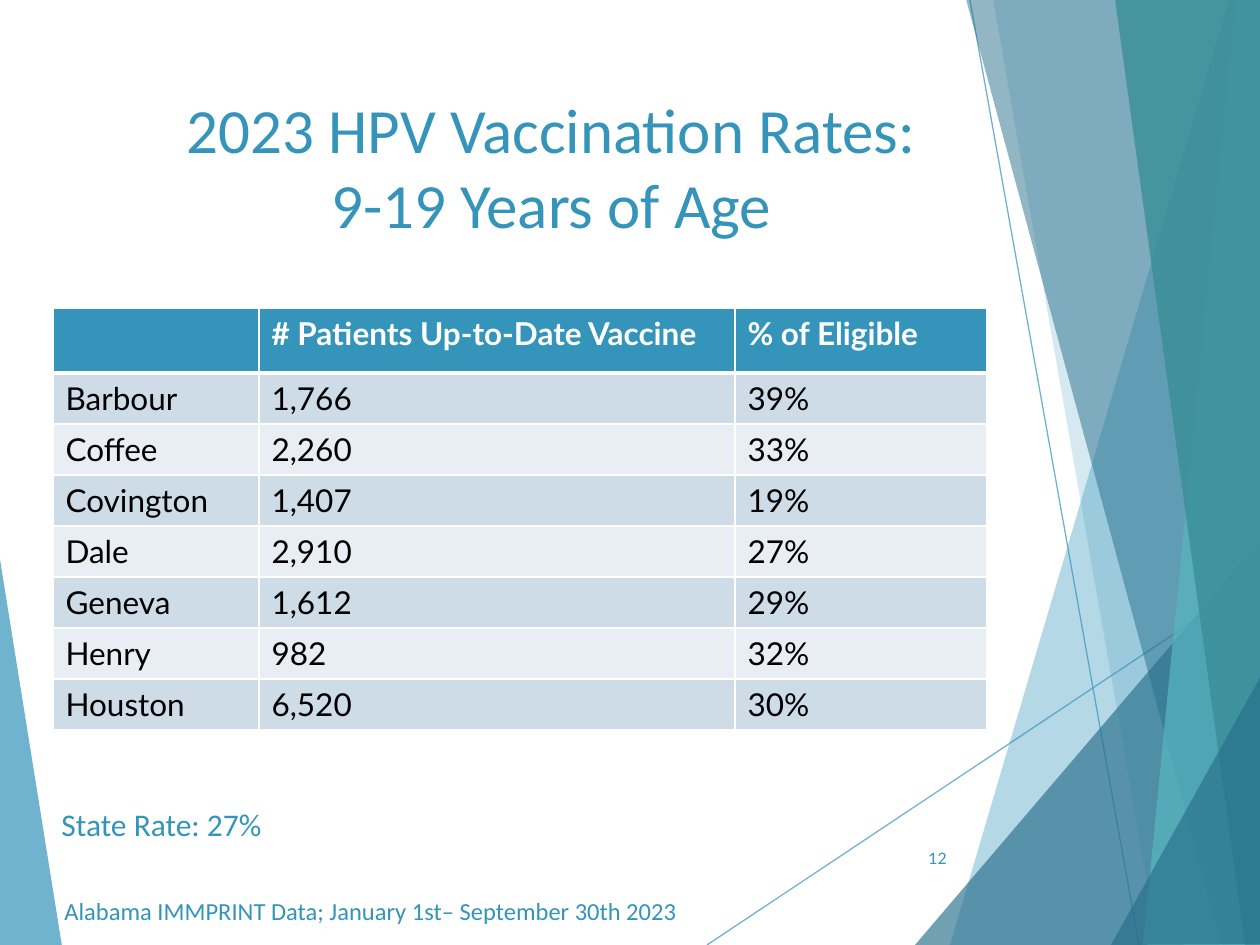
from lxml import etree
from pptx import Presentation
from pptx.dml.color import RGBColor
from pptx.enum.shapes import MSO_CONNECTOR
from pptx.enum.text import MSO_ANCHOR, PP_ALIGN
from pptx.oxml import parse_xml
from pptx.oxml.ns import nsdecls, qn
from pptx.util import Pt

PX = 914400 / 126
STRAIGHT = MSO_CONNECTOR.STRAIGHT
TOP, MIDDLE = MSO_ANCHOR.TOP, MSO_ANCHOR.MIDDLE
LEFT, CENTER, RIGHT = PP_ALIGN.LEFT, PP_ALIGN.CENTER, PP_ALIGN.RIGHT
BLUE, NAVY, AQUA, TEAL = "3494BA", "276F8B", "58B6C0", "3A8F98"
WHITE, BLACK = "FFFFFF", "000000"


def px(n):
    return round(n * PX)


def paint(fmt, color, alpha=100):
    """Set a solid colour on a fill or font, with opacity in percent."""
    if hasattr(fmt, "solid"):
        fmt.solid()
        target = fmt.fore_color
    else:
        target = fmt.color
    target.rgb = RGBColor.from_string(color)
    if alpha < 100:
        clr = target._xFill.find(qn("a:srgbClr"))
        etree.SubElement(clr, qn("a:alpha")).set("val", str(alpha * 1000))


prs = Presentation()
prs.slide_width, prs.slide_height = px(1260), px(945)
slide = prs.slides.add_slide(prs.slide_layouts[6])
shapes = slide.shapes

# Left wedge, thin lines and right-hand facets, back to front
wedge = ([(-1, 553), (62, 946), (-1, 945)], BLUE, 70)
facets = [
    ([(1229, 0), (950, 945), (1262, 946), (1261, 1)], BLUE, 36),
    ([(993, -1), (1158, 945), (1261, 945), (1261, -1)], BLUE, 20),
    ([(915, 945), (1260, 541), (1261, 945)], NAVY, 66),
    ([(966, -1), (1222, 945), (1261, 944), (1261, -1)], NAVY, 50),
    ([(1236, -1), (1143, 945), (1261, 945), (1260, -1)], AQUA, 70),
    ([(1115, -1), (1245, 945), (1262, 945), (1260, -1)], TEAL, 82),
    ([(1111, 945), (1262, 674), (1262, 944)], NAVY, 66),
]
lines = [(707, 945, 1261, 576), (970, 0, 1139, 945)]

for i, (points, color, alpha) in enumerate([wedge] + facets):
    fb = shapes.build_freeform(*points[0], scale=PX)
    fb.add_line_segments(points[1:], close=True)
    sp = fb.convert_to_shape()
    sp.shadow.inherit = False
    sp.line.fill.background()
    paint(sp.fill, color, alpha)
    if i == 0:
        for ends in lines:
            cx = shapes.add_connector(STRAIGHT, *[px(n) for n in ends])
            cx.line.width = Pt(0.75)
            paint(cx.line.fill, BLUE, 70)
            etree.SubElement(cx._element.spPr, qn("a:effectLst"))

# Title, slide number, state rate and data credit
texts = [
    ("2023 HPV Vaccination Rates:\v9-19 Years of Age", (84, 84, 935, 181),
     {"name": "Calibri", "size": Pt(36)}, CENTER, TOP),
    ("12", (888, 833, 71, 50), {"name": "Lato", "size": Pt(9)}, RIGHT, MIDDLE),
    ("State Rate: 27%", (49, 799, 725, 89),
     {"name": "Calibri", "size": Pt(18)}, LEFT, TOP),
    ("Alabama IMMPRINT Data; January 1st– September 30th 2023",
     (52, 890, 835, 43), {"name": "Calibri", "size": Pt(14)}, LEFT, TOP),
]
for text, box, font, align, anchor in texts:
    tf = shapes.add_textbox(*[px(n) for n in box]).text_frame
    tf.word_wrap = True
    tf.vertical_anchor = anchor
    p = tf.paragraphs[0]
    p.text = text
    p.alignment = align
    for r in p.runs:
        for key, value in font.items():
            setattr(r.font, key, value)
        paint(r.font, BLUE)

# County table
rows = [
    ("", "# Patients Up-to-Date Vaccine", "% of Eligible"),
    ("Barbour", "1,766", "39%"),
    ("Coffee", "2,260", "33%"),
    ("Covington", "1,407", "19%"),
    ("Dale", "2,910", "27%"),
    ("Geneva", "1,612", "29%"),
    ("Henry", "982", "32%"),
    ("Houston", "6,520", "30%"),
]
col_widths = [206, 476, 252]
row_heights = [65] + [51] * (len(rows) - 1)
bands = ["E8EEF3", "CEDCE7"]
table = shapes.add_table(len(rows), len(col_widths), px(53), px(308),
                         px(sum(col_widths)), px(sum(row_heights))).table
for col, width in zip(table.columns, col_widths):
    col.width = px(width)
for i, (row, height) in enumerate(zip(rows, row_heights)):
    table.rows[i].height = px(height)
    header = i == 0
    for j, text in enumerate(row):
        cell = table.cell(i, j)
        for side in "LRTB":
            thick = (header and side == "B") or (i == 1 and side == "T")
            cell._tc.get_or_add_tcPr().append(parse_xml(
                f'<a:ln{side} {nsdecls("a")} w="{Pt(3 if thick else 1)}">'
                f'<a:solidFill><a:srgbClr val="{WHITE}"/></a:solidFill>'
                f'</a:ln{side}>'))
        paint(cell.fill, BLUE if header else bands[i % 2])
        p = cell.text_frame.paragraphs[0]
        p.text = text
        font = {"name": "Lato", "size": Pt(18), "bold": header}
        for key, value in font.items():
            setattr(p.font, key, value)
        for r in p.runs:
            for key, value in font.items():
                setattr(r.font, key, value)
            paint(r.font, WHITE if header else BLACK)

prs.save("out.pptx")
